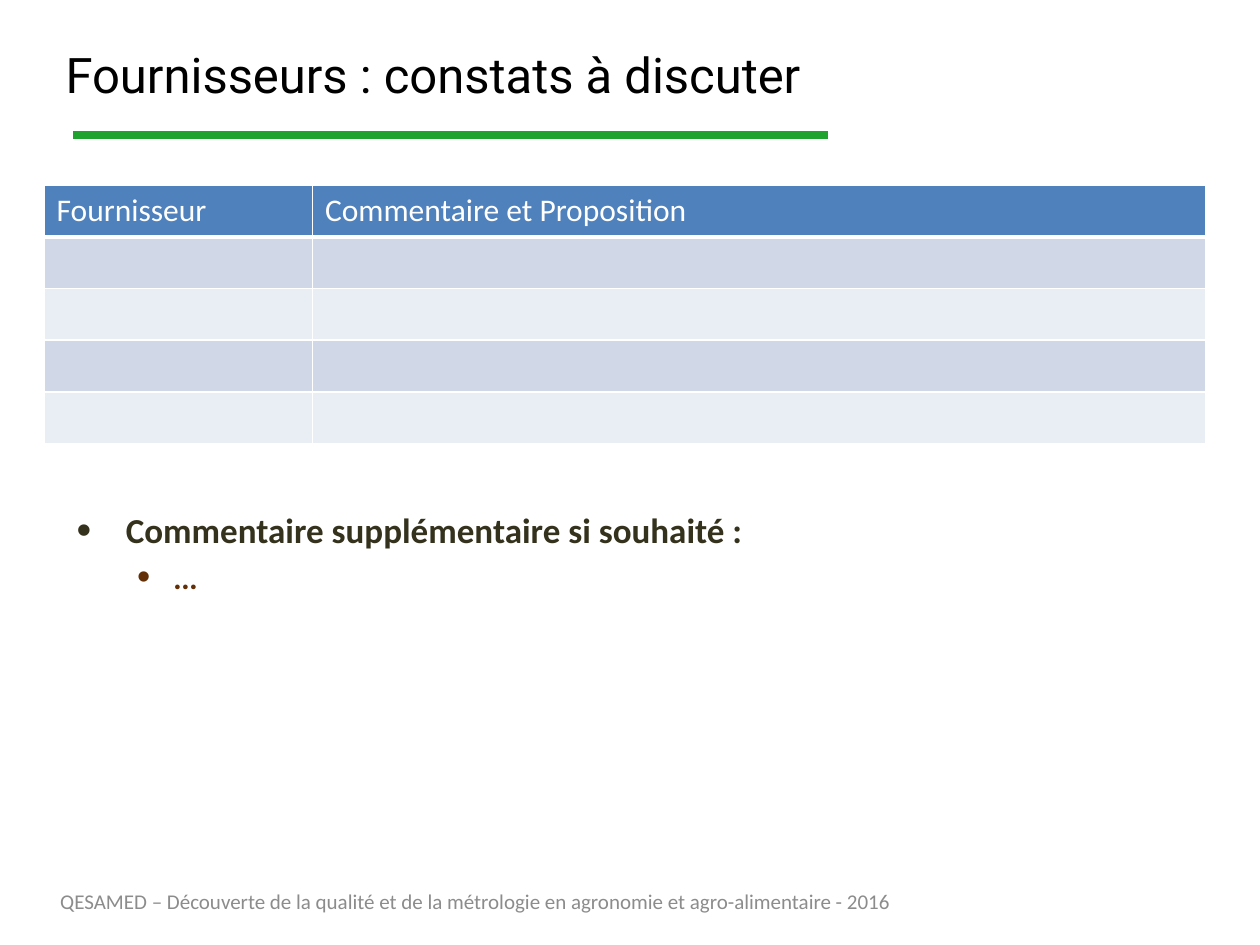
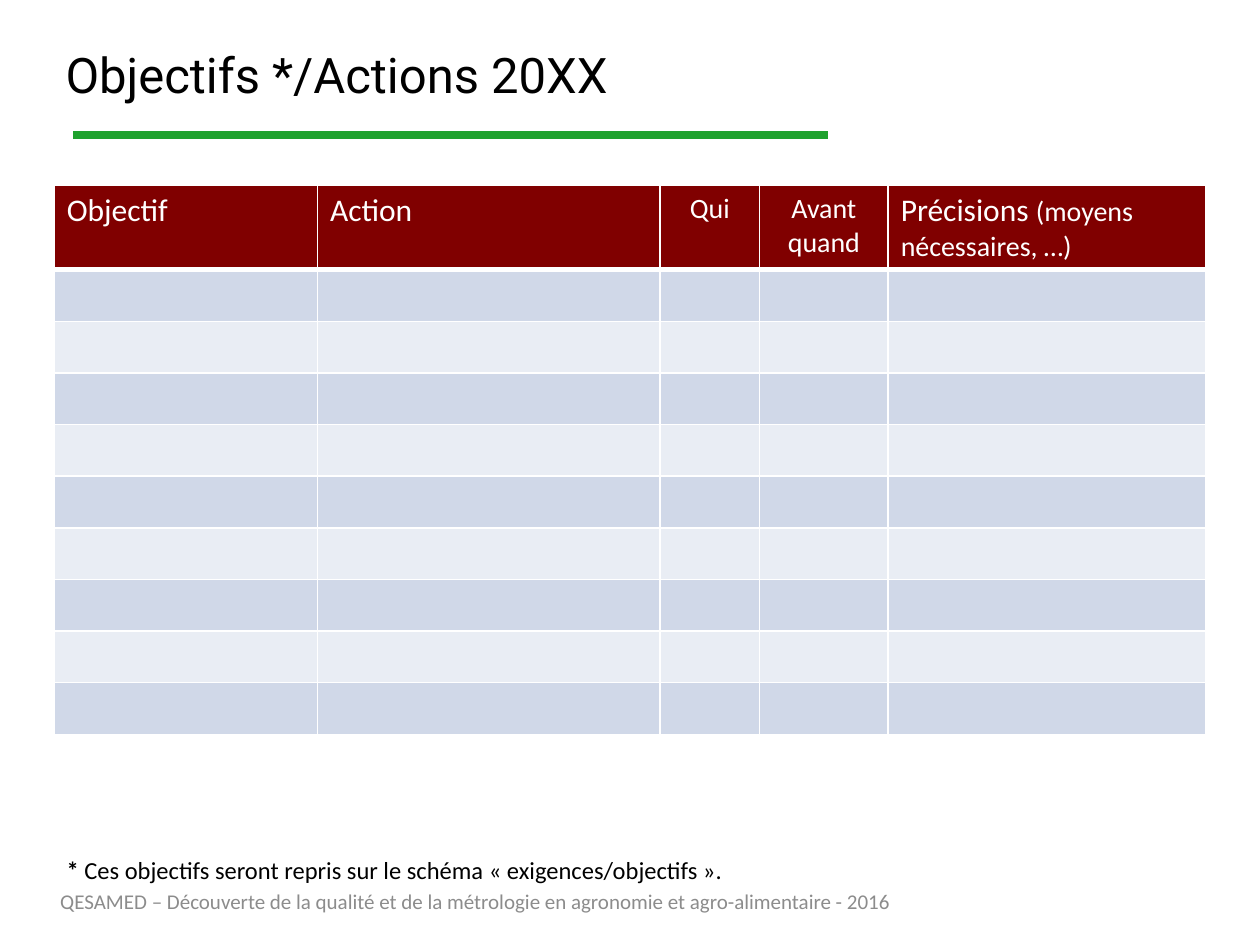
"""Build two review slides: supplier findings and objectives with actions."""
from dataclasses import dataclass

from lxml import etree
from pptx import Presentation
from pptx import util as u
from pptx.dml.color import RGBColor
from pptx.enum import shapes, text
from pptx.oxml.ns import qn

BLACK = RGBColor(0x00, 0x00, 0x00)
WHITE = RGBColor(0xFF, 0xFF, 0xFF)
GREEN = RGBColor(0x1F, 0xA2, 0x2E)
GREY = RGBColor(0x8C, 0x8C, 0x8C)
BLUE = RGBColor(0x4F, 0x81, 0xBD)
MAROON = RGBColor(0x80, 0x00, 0x00)
BANDS = (RGBColor(0xD0, 0xD8, 0xE8), RGBColor(0xE9, 0xED, 0xF4))
OLIVE = RGBColor(0x34, 0x32, 0x1D)
BROWN = RGBColor(0x62, 0x2F, 0x06)

BODY_FONT = "Calibri"
TITLE_FONT = "Roboto"
FOOTER = "QESAMED – Découverte de la qualité et de la métrologie en agronomie et agro-alimentaire - 2016"
TABLE_TOP = 1.47
ROW_HEIGHT = 0.41


@dataclass(frozen=True)
class Run:
    """A piece of text with one format."""
    words: str
    size: int = 18
    color: RGBColor = WHITE
    bold: bool = False
    italic: bool = False
    font: str = BODY_FONT


@dataclass(frozen=True)
class Column:
    """A table column with its heading."""
    width: float
    heading: tuple[Run, ...]
    centered: bool = False


@dataclass(frozen=True)
class Grid:
    """A table with a coloured heading and empty banded rows."""
    left: float
    columns: tuple[Column, ...]
    heading_height: float
    heading_fill: RGBColor
    empty_rows: int


@dataclass(frozen=True)
class Bullet:
    """A bulleted paragraph."""
    run: Run
    margin: float
    hanging: float
    space_before: int


SUPPLIERS = Grid(0.35, (
    Column(2.13, (Run("Fournisseur"),)),
    Column(7.09, (Run("Commentaire et Proposition"),)),
), ROW_HEIGHT, BLUE, 4)

OBJECTIVES = Grid(0.43, (
    Column(2.09, (Run("Objectif"),)),
    Column(2.72, (Run("Action"),)),
    Column(0.79, (Run("Qui", 16),), True),
    Column(1.02, (Run("Avant quand", 16),), True),
    Column(2.52, (Run("Précisions "), Run("(moyens nécessaires, …)", 16))),
), 0.67, MAROON, 9)

COMMENTS = (
    Bullet(Run("Commentaire supplémentaire si souhaité :", 20, OLIVE, bold=True), 0.39, 0.39, 0),
    Bullet(Run("…", 18, BROWN, bold=True, italic=True), 0.78, 0.3, 4),
)

FOOTNOTE = (
    Run("* ", 14, BLACK, bold=True),
    Run("Ces objectifs seront repris sur le schéma « exigences/objectifs ».", 14, BLACK),
)


def add_runs(paragraph, runs: tuple[Run, ...]) -> None:
    """Append formatted runs to a paragraph."""
    for item in runs:
        run = paragraph.add_run()
        run.text = item.words
        font = run.font
        font.name, font.size = item.font, u.Pt(item.size)
        font.bold, font.italic = item.bold, item.italic
        font.color.rgb = item.color


def add_text_box(slide, left: float, top: float, width: float, height: float):
    """Add a wrapping text box and return its text frame."""
    shape = slide.shapes.add_textbox(*map(u.Inches, (left, top, width, height)))
    shape.text_frame.word_wrap = True
    return shape.text_frame


def add_titled_slide(presentation, title: str):
    """Add a slide with its title, green rule and footer."""
    slide = presentation.slides.add_slide(presentation.slide_layouts[5])
    shape = slide.shapes.title
    shape.left, shape.top, shape.width, shape.height = map(u.Inches, (0.42, 0.21, 9.58, 0.75))
    shape.text_frame.vertical_anchor = text.MSO_ANCHOR.MIDDLE
    paragraph = shape.text_frame.paragraphs[0]
    paragraph.alignment = text.PP_ALIGN.LEFT
    add_runs(paragraph, (Run(title, 28, BLACK, font=TITLE_FONT),))

    rule = slide.shapes.add_connector(
        shapes.MSO_CONNECTOR.STRAIGHT, *map(u.Inches, (0.58, 1.07, 6.57, 1.07)))
    rule.line.color.rgb = GREEN
    rule.line.width = u.Pt(4.5)
    etree.SubElement(rule._element.spPr, qn("a:effectLst"))

    footer = add_text_box(slide, 0.38, 6.95, 8.26, 0.4)
    footer.vertical_anchor = text.MSO_ANCHOR.MIDDLE
    add_runs(footer.paragraphs[0], (Run(FOOTER, 12, GREY),))
    return slide


def style_cell(cell, fill: RGBColor, bottom_width: int = 1) -> None:
    """Give a cell white borders and a plain fill."""
    properties = cell._tc.get_or_add_tcPr()
    for side, width in (("L", 1), ("R", 1), ("T", 1), ("B", bottom_width)):
        border = etree.SubElement(properties, qn(f"a:ln{side}"), w=str(u.Pt(width)))
        solid = etree.SubElement(border, qn("a:solidFill"))
        etree.SubElement(solid, qn("a:srgbClr"), val=str(WHITE))
    cell.fill.solid()
    cell.fill.fore_color.rgb = fill


def add_grid(slide, grid: Grid) -> None:
    """Draw a table from its description."""
    heights = [grid.heading_height] + [ROW_HEIGHT] * grid.empty_rows
    width = sum(column.width for column in grid.columns)
    table = slide.shapes.add_table(
        len(heights), len(grid.columns),
        *map(u.Inches, (grid.left, TABLE_TOP, width, sum(heights)))).table
    table.first_row = table.horz_banding = False
    for row, height in zip(table.rows, heights):
        row.height = u.Inches(height)
    for index, column in enumerate(grid.columns):
        table.columns[index].width = u.Inches(column.width)
        heading = table.cell(0, index)
        style_cell(heading, grid.heading_fill, 3)
        paragraph = heading.text_frame.paragraphs[0]
        if column.centered:
            paragraph.alignment = text.PP_ALIGN.CENTER
        add_runs(paragraph, column.heading)
        for row in range(grid.empty_rows):
            style_cell(table.cell(row + 1, index), BANDS[row % 2])


def add_bullets(frame, bullets: tuple[Bullet, ...]) -> None:
    """Fill a text frame with bulleted paragraphs."""
    for index, bullet in enumerate(bullets):
        paragraph = frame.add_paragraph() if index else frame.paragraphs[0]
        paragraph.level = index
        properties = paragraph._p.get_or_add_pPr()
        properties.set("marL", str(u.Inches(bullet.margin)))
        properties.set("indent", str(-u.Inches(bullet.hanging)))
        etree.SubElement(properties, qn("a:buSzPct"), val="120000")
        etree.SubElement(properties, qn("a:buFont"), typeface="Arial")
        etree.SubElement(properties, qn("a:buChar"), char="•")
        paragraph.space_before = u.Pt(bullet.space_before)
        add_runs(paragraph, (bullet.run,))


def main() -> None:
    """Build and save the presentation."""
    presentation = Presentation()
    presentation.slide_width, presentation.slide_height = u.Inches(10), u.Inches(7.5)

    suppliers = add_titled_slide(presentation, "Fournisseurs : constats à discuter")
    add_grid(suppliers, SUPPLIERS)
    add_bullets(add_text_box(suppliers, 0.51, 3.99, 8.98, 2.91), COMMENTS)

    objectives = add_titled_slide(presentation, "Objectifs */Actions 20XX")
    add_grid(objectives, OBJECTIVES)
    add_runs(add_text_box(objectives, 0.43, 6.74, 9.21, 0.34).paragraphs[0], FOOTNOTE)

    presentation.save("out.pptx")


if __name__ == "__main__":
    main()
